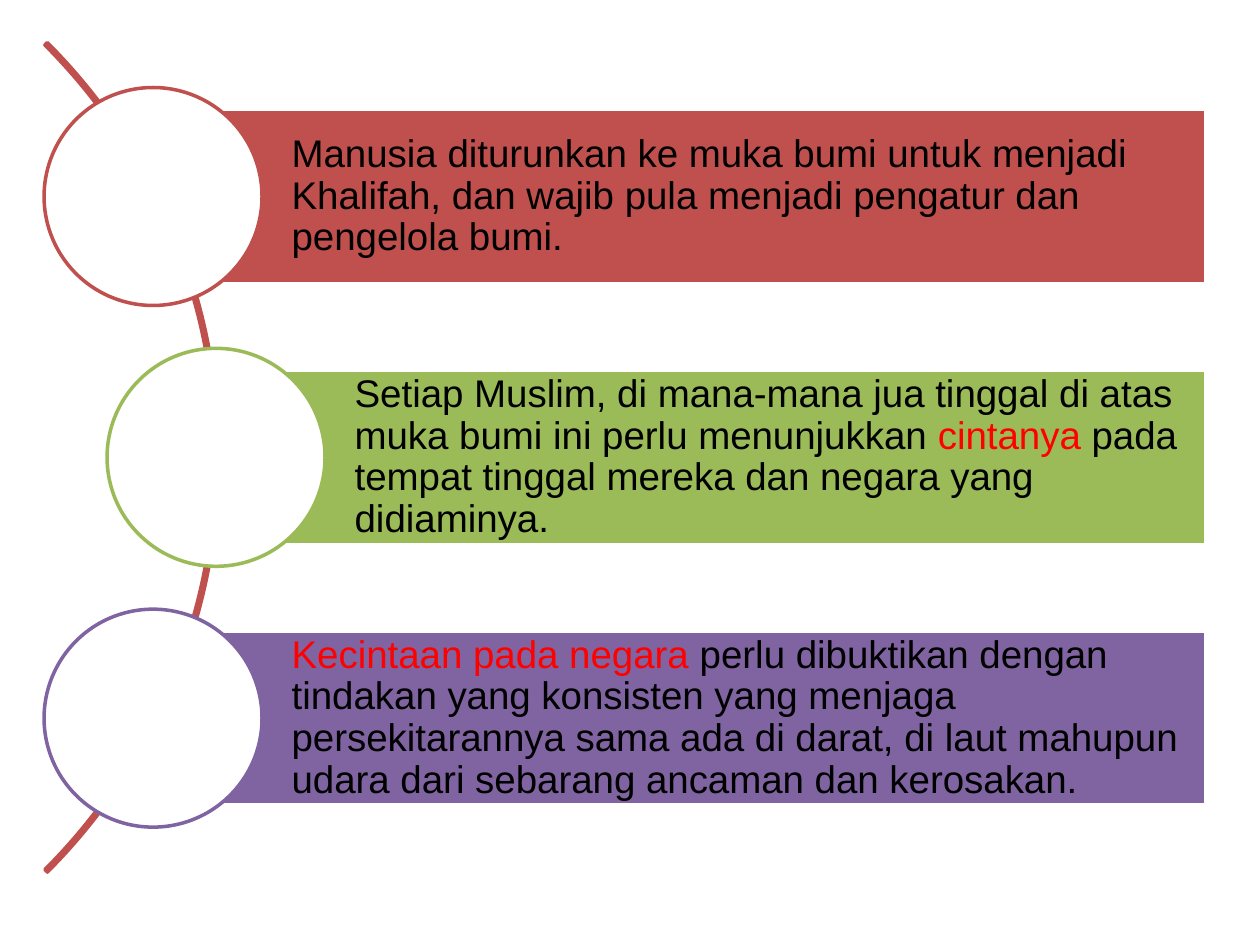
"""Build a slide with three statements on bars that hang from a curved line."""
import pptx
import pptx.dml.color
import pptx.enum.shapes
import pptx.enum.text
import pptx.util
from pptx.util import Inches

COLORS = {
    "red": "C0504D",
    "green": "9BBB59",
    "purple": "8064A2",
    "white": "FFFFFF",
    "text": "000000",
    "accent": "FF0000",
}
STATEMENTS = [
    ("red", 0.35, [
        ("Manusia diturunkan ke muka bumi untuk menjadi Khalifah, dan wajib pula "
         "menjadi pengatur dan pengelola bumi.", "text"),
    ]),
    ("green", 0.85, [
        ("Setiap Muslim, di mana-mana jua tinggal di atas muka bumi ini perlu "
         "menunjukkan ", "text"),
        ("cintanya", "accent"),
        (" pada tempat tinggal mereka dan negara yang didiaminya.", "text"),
    ]),
    ("purple", 0.35, [
        ("Kecintaan pada negara ", "accent"),
        ("perlu dibuktikan dengan tindakan yang konsisten yang menjaga "
         "persekitarannya sama ada di darat, di laut mahupun udara dari sebarang "
         "ancaman dan kerosakan.", "text"),
    ]),
]
MIDDLE, PITCH = 3.63, 2.07
CIRCLE, BAR_HEIGHT, BAR_RIGHT = 1.73, 1.38, 9.57
ARC_LEFT, ARC_SIZE = -7.57, 9.31


def color(name):
    return pptx.dml.color.RGBColor.from_string(COLORS[name])


def add_shape(page, kind, left, center, width, height, fill, line):
    shape = page.shapes.add_shape(
        kind, Inches(left), Inches(center - height / 2), Inches(width), Inches(height))
    shape.shadow.inherit = False
    if fill:
        shape.fill.solid()
        shape.fill.fore_color.rgb = color(fill)
    else:
        shape.fill.background()
    shape.line.color.rgb = color(line)
    shape.line.width = pptx.util.Pt(2)
    return shape


def write_statement(bar, spans):
    frame = bar.text_frame
    frame.word_wrap = True
    frame.vertical_anchor = pptx.enum.text.MSO_ANCHOR.MIDDLE
    frame.margin_left = Inches(1.1)
    frame.margin_top = frame.margin_right = frame.margin_bottom = Inches(0.06)
    para = frame.paragraphs[0]
    para.alignment = pptx.enum.text.PP_ALIGN.LEFT
    para.line_spacing = 0.9
    para.font.name = "Arial"
    para.font.size = pptx.util.Pt(22)
    for words, ink in spans:
        span = para.add_run()
        span.text = words
        span.font.color.rgb = color(ink)


def main():
    deck = pptx.Presentation()
    deck.slide_width, deck.slide_height = Inches(10), Inches(7.5)
    page = deck.slides.add_slide(deck.slide_layouts[6])
    kinds = pptx.enum.shapes.MSO_SHAPE

    arc = add_shape(page, kinds.BLOCK_ARC, ARC_LEFT, MIDDLE, ARC_SIZE, ARC_SIZE, None, "red")
    for index, value in enumerate((189, 27, 0.003)):
        arc.adjustments[index] = value

    for index, (hue, left, spans) in enumerate(STATEMENTS):
        center = MIDDLE + (index - 1) * PITCH
        bar_left = left + CIRCLE / 2
        bar = add_shape(page, kinds.RECTANGLE, bar_left, center,
                        BAR_RIGHT - bar_left, BAR_HEIGHT, hue, "white")
        write_statement(bar, spans)
        add_shape(page, kinds.OVAL, left, center, CIRCLE, CIRCLE, "white", hue)

    deck.save("out.pptx")


if __name__ == "__main__":
    main()
